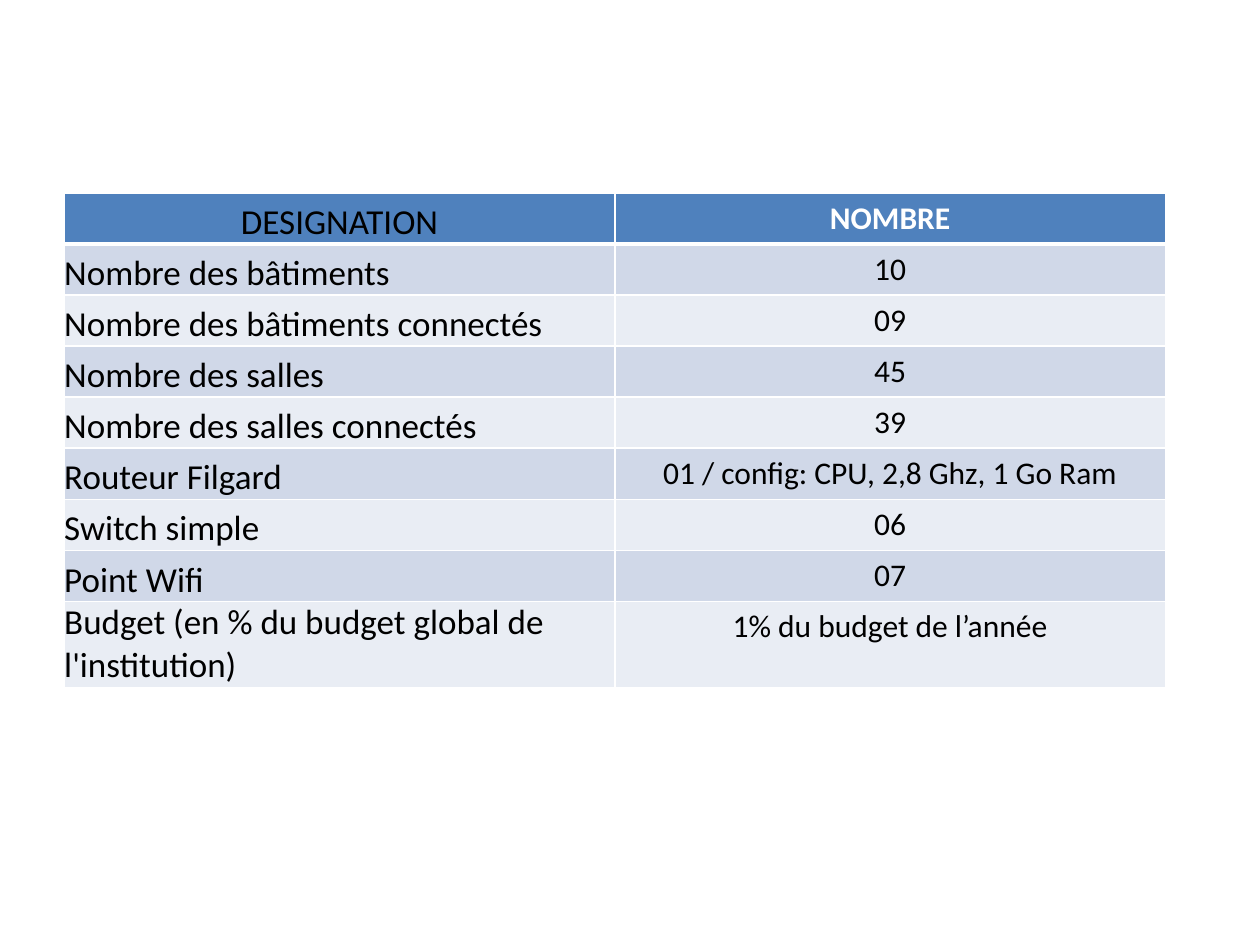
from lxml.etree import SubElement as Sub
from pptx import Presentation as Deck
from pptx.dml.color import RGBColor as Rgb
from pptx.enum.text import MSO_ANCHOR as Anchor, PP_ALIGN as Align
from pptx.oxml.ns import qn
from pptx.util import Inches, Pt

ROWS = [
    ("DESIGNATION", "NOMBRE"),
    ("Nombre des bâtiments", "10"),
    ("Nombre des bâtiments connectés", "09"),
    ("Nombre des salles", "45"),
    ("Nombre des salles connectés", "39"),
    ("Routeur Filgard", "01 / config: CPU, 2,8 Ghz, 1 Go Ram"),
    ("Switch simple", "06"),
    ("Point Wifi", "07"),
    ("Budget (en % du budget global de l'institution)", "1% du budget de l’année"),
]


def color(code):
    return Rgb.from_string(code)


class Page:
    font = "Calibri"
    ink = "000000"
    white = "FFFFFF"
    head = "4F81BD"
    bands = ("E9EDF4", "D0D8E8")

    def __init__(self, slide):
        self.slide = slide

    def edge(self, cell, side, width):
        line = Sub(cell._tc.get_or_add_tcPr(), qn(f"a:ln{side}"), w=str(Pt(width)))
        fill = Sub(line, qn("a:solidFill"))
        Sub(fill, qn("a:srgbClr"), val=self.white)

    def cell(self, cell, text, row, col):
        top = row == 0
        label = col == 0
        for side in "LRTB":
            thick = (top and side == "B") or (row == 1 and side == "T")
            self.edge(cell, side, 3 if thick else 1)
        cell.fill.solid()
        cell.fill.fore_color.rgb = color(self.head if top else self.bands[row % 2])
        if label:
            cell.vertical_anchor = Anchor.BOTTOM
            cell.margin_left = cell.margin_right = 0
            cell.margin_top = cell.margin_bottom = 0
        cell.text_frame.text = text
        para = cell.text_frame.paragraphs[0]
        para.alignment = Align.LEFT if label and not top else Align.CENTER
        font = para.runs[0].font
        font.name = self.font
        font.size = Pt(20 if label else 18)
        font.bold = top and not label
        font.color.rgb = color(self.white if font.bold else self.ink)

    def table(self, rows, left, top, width, height, last):
        frame = self.slide.shapes.add_table(
            len(rows), len(rows[0]),
            Inches(left), Inches(top), Inches(width), Inches(height),
        )
        grid = frame.table
        for col in grid.columns:
            col.width = Inches(width / len(rows[0]))
        for line in grid.rows:
            line.height = Inches((height - last) / (len(rows) - 1))
        grid.rows[len(rows) - 1].height = Inches(last)
        for row, texts in enumerate(rows):
            for col, text in enumerate(texts):
                self.cell(grid.cell(row, col), text, row, col)


def main():
    deck = Deck()
    deck.slide_width, deck.slide_height = Inches(10), Inches(7.5)
    page = Page(deck.slides.add_slide(deck.slide_layouts[6]))
    page.table(ROWS, 0.51, 1.53, 8.74, 3.91, 0.67)
    deck.save("out.pptx")


if __name__ == "__main__":
    main()
